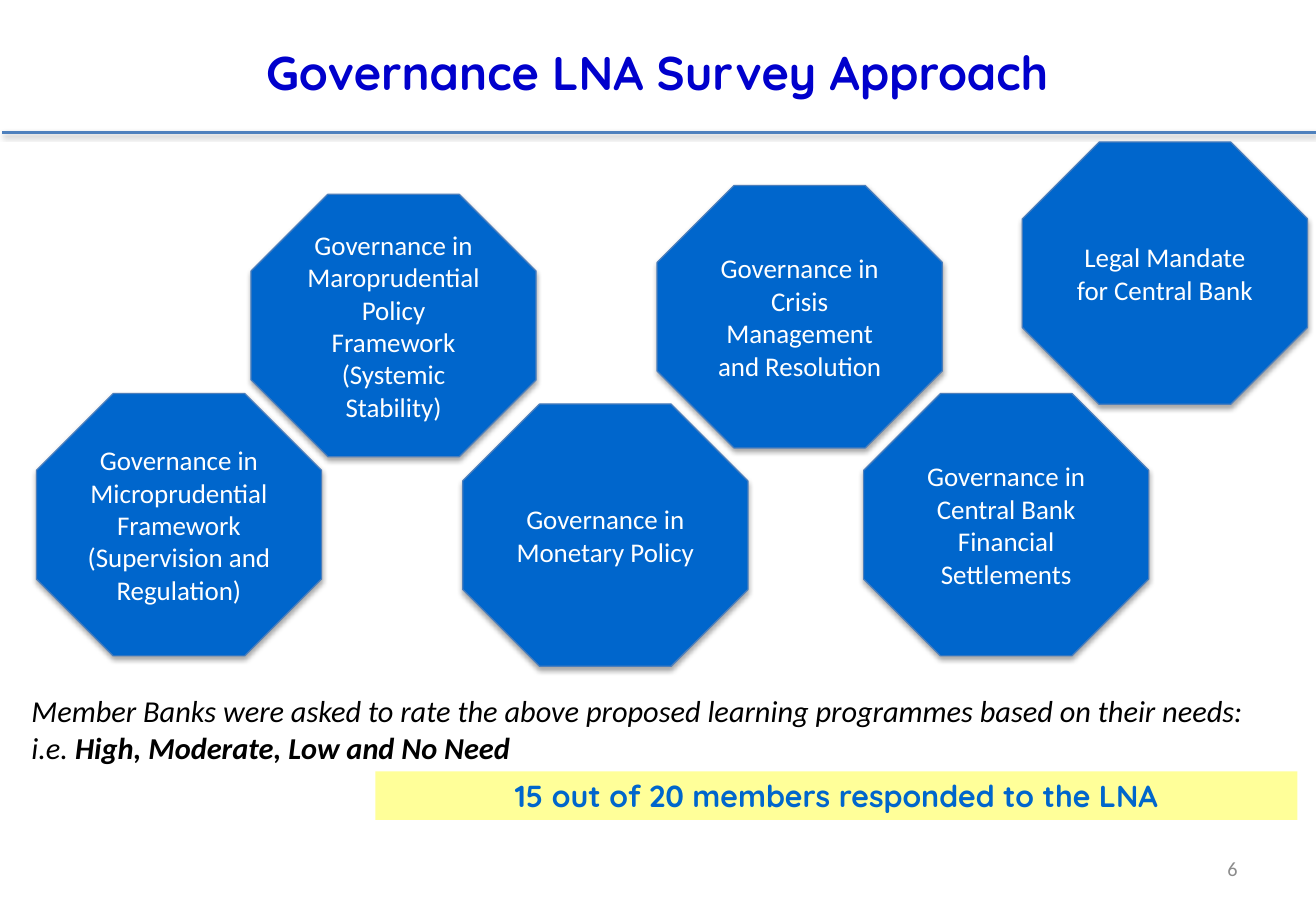
from dataclasses import dataclass
from lxml.etree import SubElement
from pptx import Presentation
from pptx.dml.color import RGBColor
from pptx.enum.shapes import MSO_CONNECTOR, MSO_SHAPE
from pptx.enum.text import MSO_ANCHOR as Anchor, MSO_AUTO_SIZE as AutoSize, PP_ALIGN as Align
from pptx.oxml.ns import qn
from pptx.util import Pt


@dataclass(frozen=True)
class Theme:
    heading_font: str = "Quicksand"
    body_font: str = "Calibri"
    title: str = "0000CC"
    programme: str = "0066CC"
    programme_edge: str = "4B7EBC"
    rule: str = "4F81BD"
    highlight: str = "FFFF99"
    ink: str = "000000"
    light: str = "FFFFFF"
    muted: str = "8C8C8C"
    title_size: int = 28
    text_size: int = 18
    programme_size: int = 16
    number_size: int = 12


theme = Theme()


def write(frame, text, *, size, color, font=theme.body_font, bold=False, italic=False,
          align=Align.LEFT, anchor=Anchor.TOP):
    frame.word_wrap = True
    frame.auto_size = AutoSize.NONE
    frame.vertical_anchor = anchor
    paragraph = frame.paragraphs[0]
    paragraph.alignment = align
    run = paragraph.add_run()
    run.text = text
    run.font.name = font
    run.font.size = Pt(size)
    run.font.bold = bold
    run.font.italic = italic
    run.font.color.rgb = RGBColor.from_string(color)


def cast_shadow(shape, distance, opacity):
    effects = SubElement(shape._element.spPr, qn("a:effectLst"))
    shadow = SubElement(effects, qn("a:outerShdw"), blurRad=str(Pt(3.1)),
                        dist=str(Pt(distance)), dir="5400000", rotWithShape="0")
    black = SubElement(shadow, qn("a:srgbClr"), val=theme.ink)
    SubElement(black, qn("a:alpha"), val=str(opacity * 1000))


deck = Presentation()
deck.slide_width, deck.slide_height = Pt(780), Pt(540)
slide = deck.slides.add_slide(deck.slide_layouts[5])
shapes = slide.shapes

rule = shapes.add_connector(MSO_CONNECTOR.STRAIGHT, Pt(1.4), Pt(78.5), Pt(780), Pt(78.5))
rule.line.color.rgb = RGBColor.from_string(theme.rule)
rule.line.width = Pt(2)
cast_shadow(rule, 1.6, 38)

heading = shapes.title
heading.left, heading.top, heading.width, heading.height = Pt(100), Pt(22.3), Pt(579), Pt(30)
write(heading.text_frame, "Governance LNA Survey Approach", size=theme.title_size,
      color=theme.title, font=theme.heading_font, bold=True, align=Align.CENTER)

page_number = shapes.add_textbox(Pt(558.7), Pt(500.4), Pt(182), Pt(28.8))
write(page_number.text_frame, "6", size=theme.number_size, color=theme.muted,
      align=Align.RIGHT, anchor=Anchor.MIDDLE)

response = shapes.add_shape(MSO_SHAPE.RECTANGLE, Pt(222.5), Pt(457.2), Pt(546.5), Pt(28.8))
response.shadow.inherit = False
response.fill.solid()
response.fill.fore_color.rgb = RGBColor.from_string(theme.highlight)
response.line.fill.background()
write(response.text_frame, "15 out of 20 members responded to the LNA", size=theme.text_size,
      color=theme.programme, font=theme.heading_font, bold=True, align=Align.CENTER)

rating = shapes.add_textbox(Pt(11.5), Pt(406.8), Pt(757), Pt(51))
for words, strong in [
    ("Member Banks were asked to rate the above proposed learning programmes "
     "based on their needs: i.e. ", False),
    ("High, Moderate, Low and No Need", True),
]:
    write(rating.text_frame, words, size=theme.text_size, color=theme.ink,
          bold=strong, italic=True)

programmes = [
    (21.6, 233.3, "Governance in Microprudential Framework (Supervision and Regulation)"),
    (148.8, 115.2, "Governance in Maroprudential Policy Framework (Systemic Stability)"),
    (274.3, 239.5, "Governance in Monetary Policy"),
    (511.9, 233.3, "Governance in Central Bank Financial Settlements"),
    (389.5, 110, "Governance in Crisis Management and Resolution"),
    (606, 84.2, "Legal Mandate for Central Bank"),
]
for left, top, name in programmes:
    programme = shapes.add_shape(MSO_SHAPE.OCTAGON, Pt(left), Pt(top), Pt(169), Pt(155.5))
    programme.fill.solid()
    programme.fill.fore_color.rgb = RGBColor.from_string(theme.programme)
    programme.line.color.rgb = RGBColor.from_string(theme.programme_edge)
    programme.line.width = Pt(0.75)
    cast_shadow(programme, 1.8, 35)
    write(programme.text_frame, name, size=theme.programme_size, color=theme.light,
          align=Align.CENTER, anchor=Anchor.MIDDLE)

deck.save("out.pptx")
